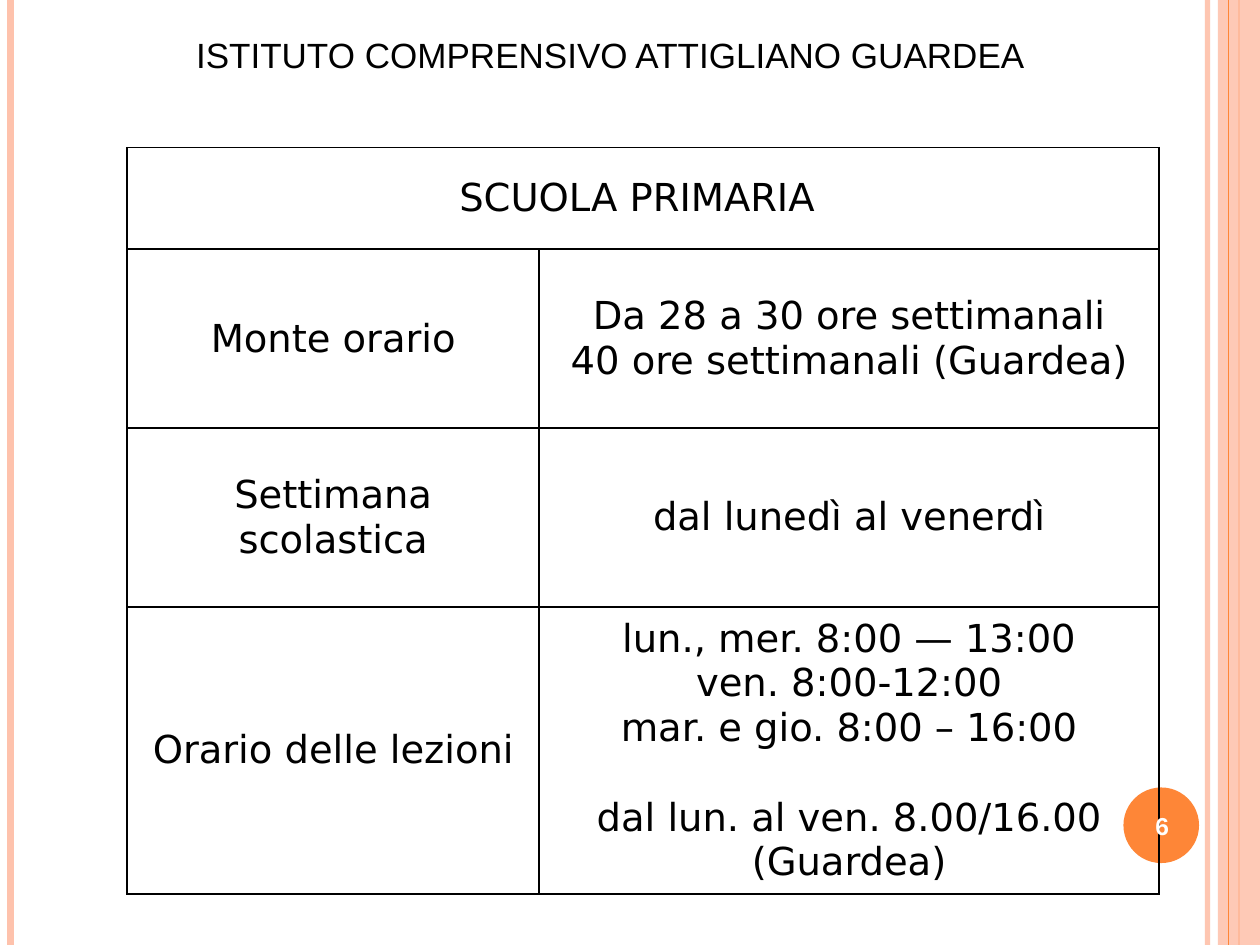
from lxml import etree
from pptx import Presentation
from pptx.dml.color import RGBColor
from pptx.enum.shapes import MSO_CONNECTOR, MSO_SHAPE
from pptx.enum.text import MSO_ANCHOR as Anchor, PP_ALIGN as Align
from pptx.oxml import parse_xml
from pptx.oxml.ns import nsdecls, qn
from pptx.util import Pt

COLORS = {"peach": "FEC2AC", "orange": "FE8637", "black": "000000", "white": "FFFFFF"}
WIDTH, HEIGHT = 720, 540


class Page:
    """Draws styled elements on one slide."""

    def __init__(self, slide):
        self.shapes = slide.shapes
        self.table_font = "DejaVu Sans"
        self.text_font = "Arial"

    def color(self, name):
        return RGBColor.from_string(COLORS[name])

    def set_alpha(self, fill, percent):
        for node in fill.iter(qn("a:srgbClr")):
            etree.SubElement(node, qn("a:alpha"), val=str(percent * 1000))

    def stripe(self, x, color, weight, alpha=100):
        line = self.shapes.add_connector(MSO_CONNECTOR.STRAIGHT, Pt(x), Pt(0), Pt(x), Pt(HEIGHT))
        line.line.color.rgb = self.color(color)
        line.line.width = Pt(weight)
        properties = line._element.spPr
        if alpha < 100:
            self.set_alpha(properties, alpha)
        etree.SubElement(properties, qn("a:effectLst"))

    def shape(self, kind, x, y, width, height, color, alpha=100):
        shape = self.shapes.add_shape(kind, Pt(x), Pt(y), Pt(width), Pt(height))
        shape.shadow.inherit = False
        shape.fill.solid()
        shape.fill.fore_color.rgb = self.color(color)
        shape.line.fill.background()
        if alpha < 100:
            self.set_alpha(shape._element.spPr, alpha)

    def add_span(self, para, text, size, font, color="black", bold=False):
        para.alignment = Align.CENTER
        span = para.add_run()
        span.text = text
        span.font.size = Pt(size)
        span.font.name = font
        span.font.bold = bold
        span.font.color.rgb = self.color(color)

    def text(self, x, y, width, height, text, size, color="black", bold=False):
        box = self.shapes.add_textbox(Pt(x), Pt(y), Pt(width), Pt(height))
        frame = box.text_frame
        frame.word_wrap = True
        frame.vertical_anchor = Anchor.MIDDLE
        self.add_span(frame.paragraphs[0], text, size, self.text_font, color, bold)

    def border(self, cell):
        properties = cell._tc.get_or_add_tcPr()
        for index, side in enumerate(("lnL", "lnR", "lnT", "lnB")):
            properties.insert(index, parse_xml(
                f'<a:{side} {nsdecls("a")} w="{Pt(1)}"><a:solidFill>'
                f'<a:srgbClr val="{COLORS["black"]}"/></a:solidFill></a:{side}>'))

    def cell(self, cell, lines, last_gap):
        cell.fill.background()
        self.border(cell)
        cell.vertical_anchor = Anchor.MIDDLE
        cell.margin_left = cell.margin_right = Pt(5)
        cell.margin_top = cell.margin_bottom = Pt(0)
        frame = cell.text_frame
        for index, line in enumerate(lines):
            para = frame.add_paragraph() if index else frame.paragraphs[0]
            self.add_span(para, line, 22, self.table_font)
        if last_gap:
            frame.paragraphs[-1].space_before = Pt(last_gap)

    def table(self, x, y, widths, heights, rows, last_gap):
        table = self.shapes.add_table(len(heights), len(widths), Pt(x), Pt(y),
                                      Pt(sum(widths)), Pt(sum(heights))).table
        table.first_row = table.horz_banding = False
        for column, width in zip(table.columns, widths):
            column.width = Pt(width)
        for row, height in zip(table.rows, heights):
            row.height = Pt(height)
        table.cell(0, 0).merge(table.cell(0, len(widths) - 1))
        for r, row in enumerate(rows):
            for c, lines in enumerate(row):
                is_last = r == len(rows) - 1 and c == len(row) - 1
                self.cell(table.cell(r, c), lines, last_gap if is_last else 0)


def main():
    deck = Presentation()
    deck.slide_width, deck.slide_height = Pt(WIDTH), Pt(HEIGHT)
    page = Page(deck.slides.add_slide(deck.slide_layouts[6]))

    page.stripe(690, "peach", 3, 93)
    page.stripe(6, "peach", 4.5)
    page.stripe(708, "orange", 1.5)
    page.shape(MSO_SHAPE.RECTANGLE, 696, 0, 24, HEIGHT, "peach", 87)
    page.stripe(702, "orange", 0.75)
    page.shape(MSO_SHAPE.OVAL, 642, 450, 43.2, 43.2, "orange")

    timetable = [
        [["SCUOLA PRIMARIA "], []],
        [["Monte orario"], ["Da 28 a 30 ore settimanali", "40 ore settimanali (Guardea)"]],
        [["Settimana scolastica"], ["dal lunedì al venerdì"]],
        [["Orario delle lezioni"],
         ["lun., mer. 8:00 — 13:00", "ven. 8:00-12:00", "mar. e gio. 8:00 – 16:00",
          "dal lun. al ven. 8.00/16.00 (Guardea)"]],
    ]
    page.table(72.7, 84.4, [235.4, 354.2], [58, 102.3, 102.3, 164], timetable, 25.6)
    page.text(54, 15.1, 589.7, 31.7, "ISTITUTO COMPRENSIVO ATTIGLIANO GUARDEA", 20)
    page.text(640, 451.4, 48.2, 41, "6", 14, "white", True)
    deck.save("out.pptx")


if __name__ == "__main__":
    main()
